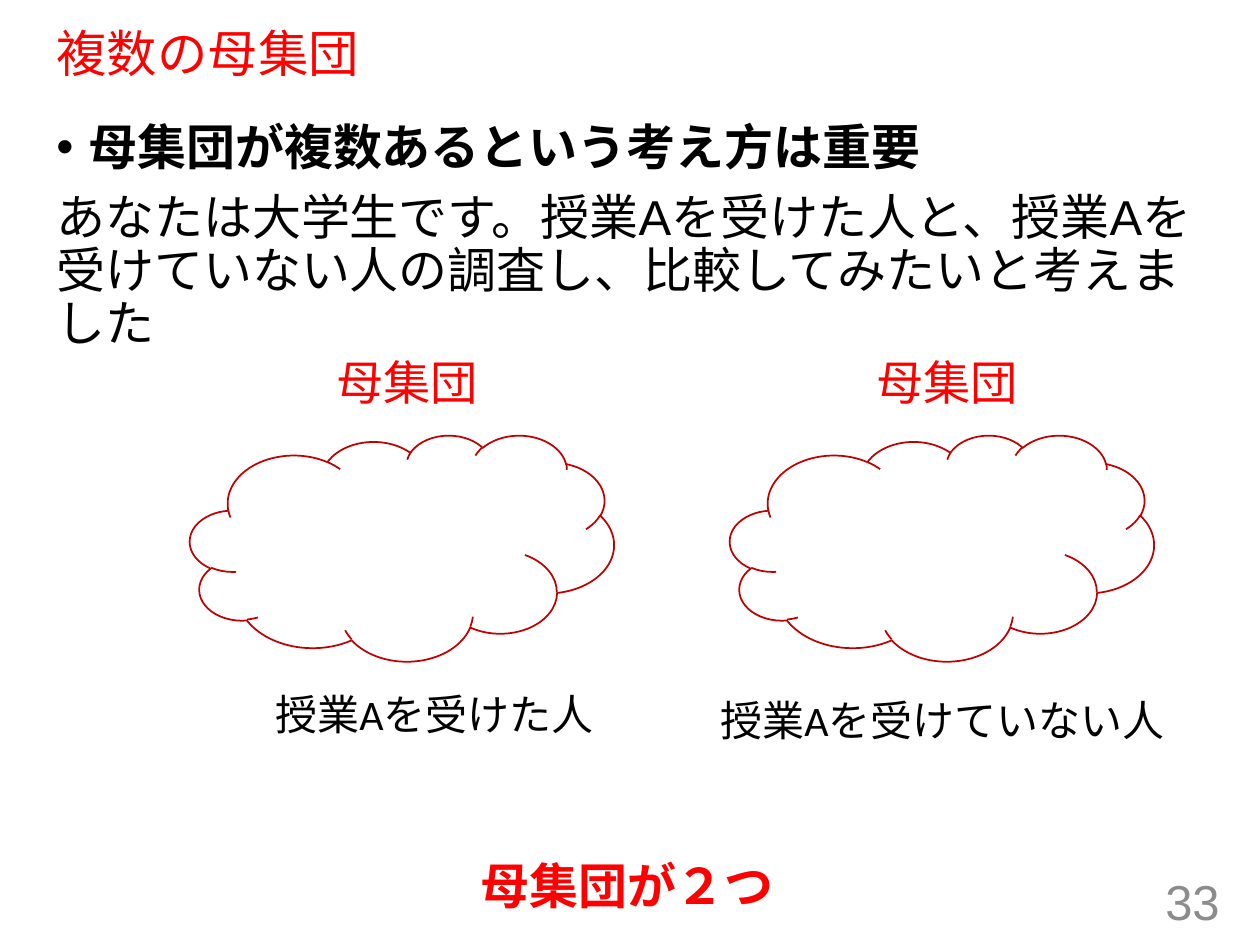
import pptx
import pptx.dml.color
import pptx.enum.shapes
import pptx.enum.text
import pptx.util
from lxml import etree
from pptx.oxml.ns import qn

PX = 914400 / 126
COLORS = {"red": "FF0000", "outline": "C00000", "text": "000000", "number": "8C8C8C"}
ALIGN = pptx.enum.text.PP_ALIGN
ANCHOR = pptx.enum.text.MSO_ANCHOR
POPULATION_STEP = 540


def px(*lengths):
    return [round(length * PX) for length in lengths]


def rgb(name):
    return pptx.dml.color.RGBColor.from_string(COLORS[name])


def apply(target, values):
    for name, value in values.items():
        setattr(target, name, value)


def add_bullet(paragraph, indent):
    properties = paragraph._p.get_or_add_pPr()
    properties.set("marL", str(px(indent)[0]))
    properties.set("indent", str(px(-indent)[0]))
    etree.SubElement(properties, qn("a:buFont")).set("typeface", "Arial")
    etree.SubElement(properties, qn("a:buChar")).set("char", "•")


def write(paragraph, text, size, color="text", face="Arial", bold=False, **layout):
    apply(paragraph, layout)
    run = paragraph.add_run()
    run.text = text
    apply(run.font, {"name": face, "size": pptx.util.Pt(size), "bold": bold})
    run.font.color.rgb = rgb(color)


def add_frame(slide, box, wrap=True, anchor=ANCHOR.TOP):
    frame = slide.shapes.add_textbox(*px(*box)).text_frame
    apply(frame, {"word_wrap": wrap, "vertical_anchor": anchor})
    return frame


def add_line(slide, box, text, size, wrap=True, anchor=ANCHOR.TOP, **style):
    write(add_frame(slide, box, wrap, anchor).paragraphs[0], text, size, **style)


def add_explanation(slide):
    frame = add_frame(slide, (44, 117, 1166, 240))
    heading = frame.paragraphs[0]
    add_bullet(heading, 32)
    write(heading, "母集団が複数あるという考え方は重要", 28, bold=True, line_spacing=0.9)
    write(frame.add_paragraph(),
          "あなたは大学生です。授業Aを受けた人と、授業Aを受けていない人の調査し、比較してみたいと考えました",
          28, line_spacing=0.9, space_before=pptx.util.Pt(10))


def add_population(slide, offset, caption, caption_box):
    cloud = slide.shapes.add_shape(pptx.enum.shapes.MSO_SHAPE.CLOUD,
                                   *px(190 + offset, 435, 424, 226))
    cloud.shadow.inherit = False
    cloud.fill.background()
    cloud.line.color.rgb = rgb("outline")
    cloud.line.width = pptx.util.Pt(1)
    add_line(slide, (324 + offset, 347, 169, 71), "母集団", 27, wrap=False, color="red")
    add_line(slide, caption_box, caption, 24, face="Calibri")


def main():
    deck = pptx.Presentation()
    deck.slide_width, deck.slide_height = px(1260, 945)
    slide = deck.slides.add_slide(deck.slide_layouts[6])
    add_line(slide, (44, 24, 1166, 64), "複数の母集団", 28.8,
             anchor=ANCHOR.MIDDLE, color="red", line_spacing=0.9)
    add_explanation(slide)
    populations = [("授業Aを受けた人", (263, 682, 383, 63)),
                   ("授業Aを受けていない人", (708, 688, 481, 63))]
    for index, (caption, caption_box) in enumerate(populations):
        add_population(slide, index * POPULATION_STEP, caption, caption_box)
    add_line(slide, (44, 856, 1166, 66), "母集団が２つ", 28, color="red", bold=True,
             alignment=ALIGN.CENTER, line_spacing=0.9)
    add_line(slide, (949, 876, 283, 50), "33", 28, anchor=ANCHOR.MIDDLE,
             color="number", alignment=ALIGN.RIGHT)
    deck.save("out.pptx")


if __name__ == "__main__":
    main()
